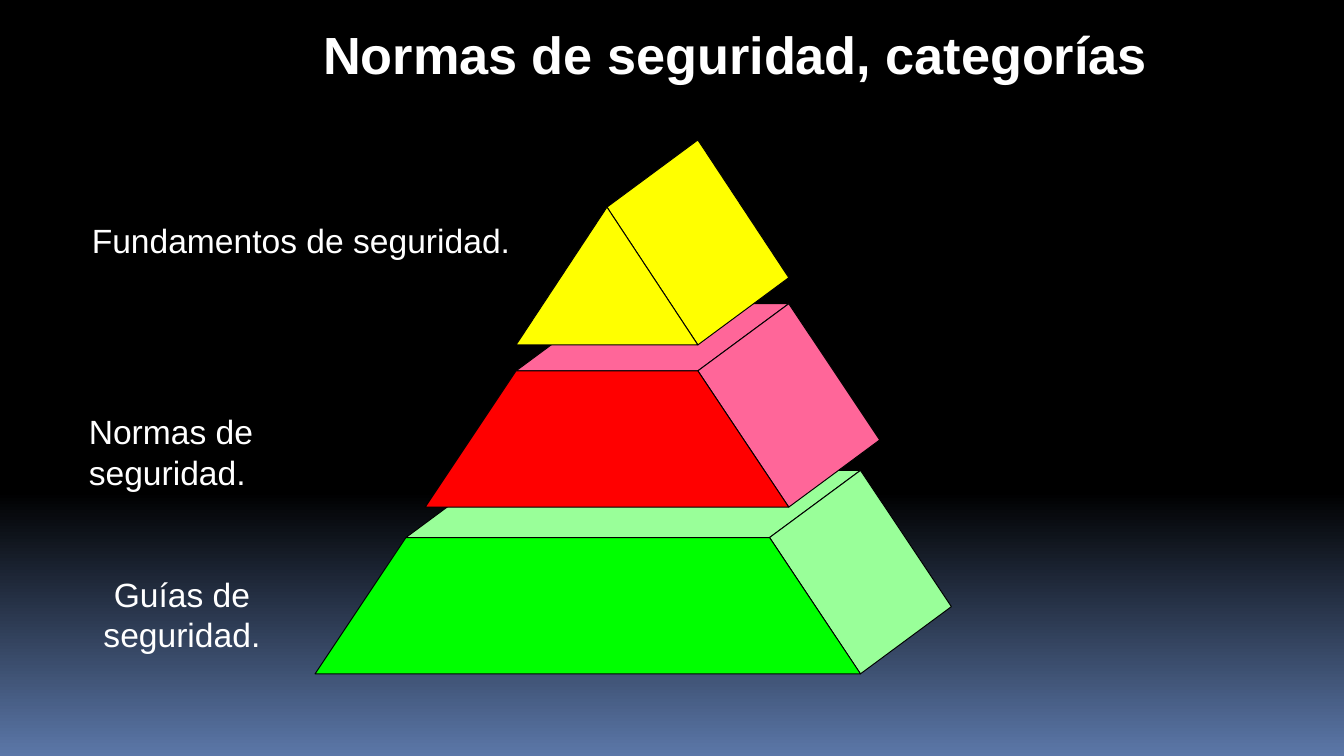
from pptx import Presentation
from pptx.dml.color import RGBColor
from pptx.enum.text import MSO_ANCHOR, MSO_AUTO_SIZE, PP_ALIGN
from pptx.util import Pt

LEFT, CENTER = PP_ALIGN.LEFT, PP_ALIGN.CENTER
TOP, MIDDLE = MSO_ANCHOR.TOP, MSO_ANCHOR.MIDDLE
NO_AUTOFIT = MSO_AUTO_SIZE.NONE
COLORS = {
    "black": "000000", "blue": "5B77A8", "white": "FFFFFF",
    "green": "00FF00", "light green": "99FF99",
    "red": "FF0000", "pink": "FF6699", "yellow": "FFFF00",
}


def color(name):
    return RGBColor.from_string(COLORS[name])


def write_text(shape, text, box, size, bold, alignment, anchor):
    for name, value in zip(("left", "top", "width", "height"), box):
        setattr(shape, name, Pt(value))
    frame_format = {"word_wrap": True, "auto_size": NO_AUTOFIT, "vertical_anchor": anchor}
    for name, value in frame_format.items():
        setattr(shape.text_frame, name, value)
    paragraph = shape.text_frame.paragraphs[0]
    paragraph.alignment = alignment
    run = paragraph.add_run()
    run.text = text
    for name, value in {"name": "Arial", "size": Pt(size), "bold": bold}.items():
        setattr(run.font, name, value)
    run.font.color.rgb = color("white")


presentation = Presentation()
presentation.slide_width, presentation.slide_height = Pt(720), Pt(405)
slide = presentation.slides.add_slide(presentation.slide_layouts[5])

background = slide.background.fill
background.gradient()
background.gradient_angle = 270
for stop, (position, name) in zip(background.gradient_stops, [(0.65, "black"), (1, "blue")]):
    stop.position = position
    stop.color.rgb = color(name)

write_text(slide.shapes.title, "Normas de seguridad, categorías",
           (82, 2, 623.5, 53.5), 28, True, CENTER, MIDDLE)

STEP = 48.7
DEPTH = 36
blocks = [
    (217.5, 4, 288, 73, "green", "light green"),
    (276.5, 2, 198.7, 73, "red", "pink"),
    (325.2, 0, 111, 73.8, "yellow", "yellow"),
]
for left, steps, top, height, front_color, side_color in blocks:
    right, bottom = left + steps * STEP, top + height
    back = top - DEPTH
    top_face = [(left, top), (right, top), (right + STEP, back), (left + STEP, back)]
    side_face = [(right, top), (right + STEP, bottom),
                 (right + 2 * STEP, bottom - DEPTH), (right + STEP, back)]
    front_face = [(left, top), (right, top), (right + STEP, bottom), (left - STEP, bottom)]
    faces = [(side_face, side_color), (front_face, front_color)]
    if steps:
        faces.insert(0, (top_face, side_color))
    for points, fill_color in faces:
        corners = [(Pt(x), Pt(y)) for x, y in dict.fromkeys(points)]
        builder = slide.shapes.build_freeform(*corners[0])
        builder.add_line_segments(corners[1:], close=True)
        face = builder.convert_to_shape()
        face.shadow.inherit = False
        face.fill.solid()
        face.fill.fore_color.rgb = color(fill_color)
        face.line.color.rgb = color("black")
        face.line.width = Pt(0.5)

labels = [
    ("Fundamentos de seguridad.", (19.5, 114.5, 283.5, 29), CENTER),
    ("Normas de seguridad.", (40.5, 216.7, 170, 51), LEFT),
    ("Guías de seguridad.", (17.5, 304, 160, 51), CENTER),
]
for text, box, alignment in labels:
    label = slide.shapes.add_textbox(0, 0, 0, 0)
    write_text(label, text, box, 18, False, alignment, TOP)

presentation.save("out.pptx")
